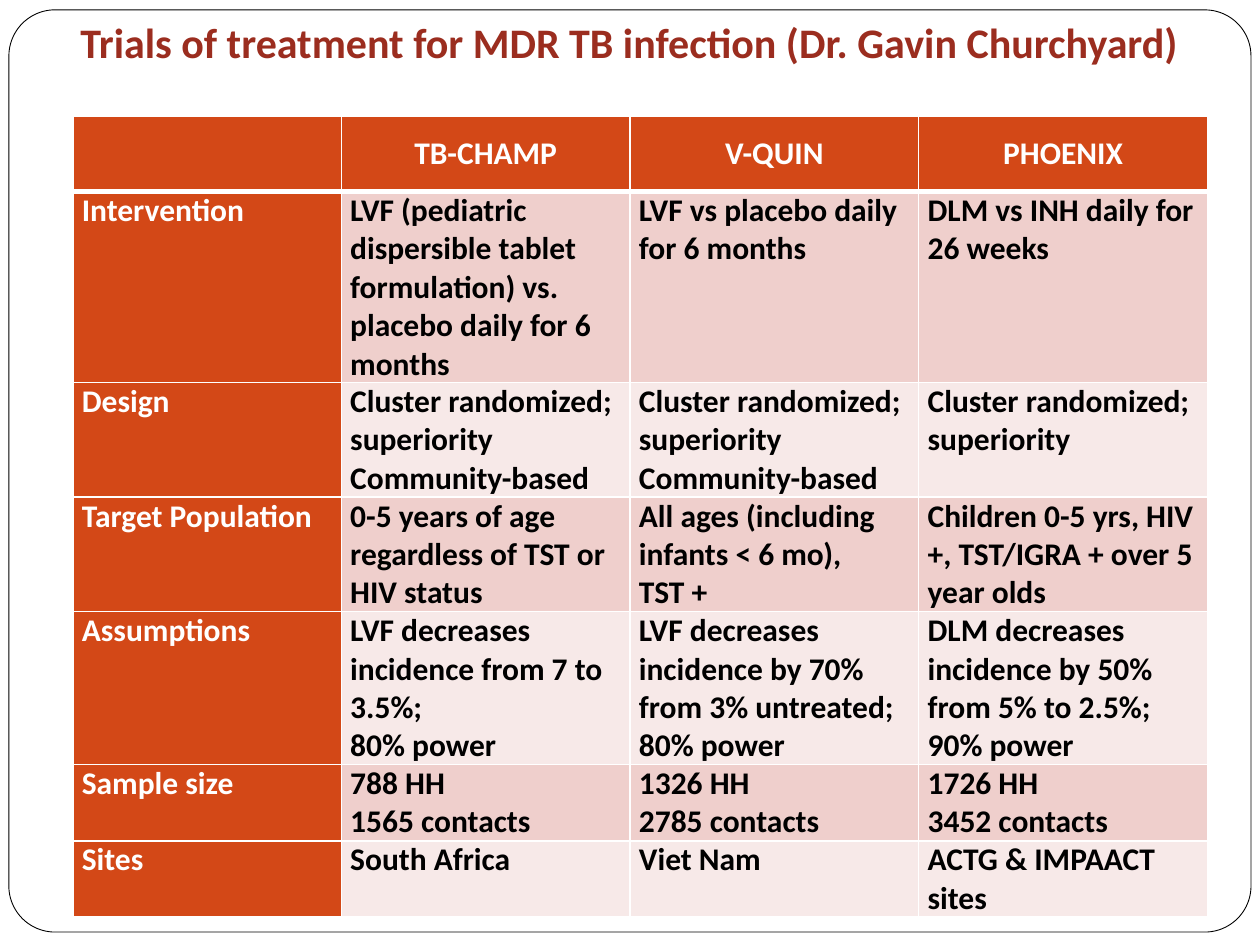
from lxml.etree import SubElement
from pptx import Presentation
from pptx.dml.color import RGBColor
from pptx.enum.shapes import MSO_SHAPE
from pptx.enum.text import MSO_ANCHOR, PP_ALIGN
from pptx.oxml.ns import qn
from pptx.util import Cm, Pt

TITLE = "Trials of treatment for MDR TB infection (Dr. Gavin Churchyard)"
TRIALS = ["", "TB-CHAMP", "V-QUIN", "PHOENIX"]
# Each newline starts a new paragraph; the number is the lines the row needs.
FEATURES = [
    (5, ["Intervention",
         "LVF (pediatric dispersible tablet formulation) vs. placebo daily for 6 months",
         "LVF vs placebo daily for 6 months",
         "DLM vs INH daily for 26 weeks"]),
    (3, ["Design",
         "Cluster randomized; superiority\nCommunity-based",
         "Cluster randomized; superiority\nCommunity-based",
         "Cluster randomized; superiority"]),
    (3, ["Target Population",
         "0-5 years of age regardless of TST or HIV status",
         "All ages (including infants < 6 mo),\nTST +",
         "Children 0-5 yrs, HIV +, TST/IGRA + over 5 year olds"]),
    (4, ["Assumptions",
         "LVF decreases incidence from 7 to 3.5%;\n80% power",
         "LVF decreases incidence by 70% from 3% untreated;\n80% power",
         "DLM decreases incidence by 50% from 5% to 2.5%;\n90% power"]),
    (2, ["Sample size",
         "788 HH\n1565 contacts",
         "1326 HH\n2785 contacts",
         "1726 HH\n3452 contacts"]),
    (2, ["Sites", "South Africa", "Viet Nam", "ACTG & IMPAACT sites"]),
]
COLORS = {"white": "FFFFFF", "black": "000000", "title": "9B2D1F",
          "header": "D34817", "odd": "EFCFCC", "even": "F7E9E8"}
FONT = "Calibri"
LABEL_WIDTH, TRIAL_WIDTH = 5.41, 5.82
HEADER_HEIGHT, LINE_HEIGHT = 1.52, 0.77


def color(name):
    return RGBColor.from_string(COLORS[name])


def style(paragraph, size, color_name, align):
    paragraph.alignment = align
    font = paragraph.font
    font.name, font.size, font.bold = FONT, Pt(size), True
    font.color.rgb = color(color_name)


def add_borders(cell, bottom):
    """Put white borders before the cell's fill, as the schema orders them."""
    properties = cell._tc.get_or_add_tcPr()
    sides = {"a:lnL": 1, "a:lnR": 1, "a:lnT": 1, "a:lnB": bottom}
    for position, (side, width) in enumerate(sides.items()):
        border = SubElement(properties, qn(side), w=str(Pt(width)))
        fill = SubElement(border, qn("a:solidFill"))
        SubElement(fill, qn("a:srgbClr"), val=COLORS["white"])
        properties.insert(position, border)


def fill_cell(cell, text, fill, ink, header):
    cell.fill.solid()
    cell.fill.fore_color.rgb = color(fill)
    cell.margin_left = cell.margin_right = Cm(0.18)
    cell.margin_top = cell.margin_bottom = 0
    cell.vertical_anchor = MSO_ANCHOR.MIDDLE if header else MSO_ANCHOR.TOP
    cell.text = text
    for paragraph in cell.text_frame.paragraphs:
        style(paragraph, 18, ink, PP_ALIGN.CENTER if header else PP_ALIGN.LEFT)
    add_borders(cell, 3 if header else 1)


def add_frame(slide):
    frame = slide.shapes.add_shape(MSO_SHAPE.ROUNDED_RECTANGLE,
                                   Cm(0.18), Cm(0.2), Cm(25.04), Cm(18.59))
    frame.adjustments[0] = 0.05
    frame.shadow.inherit = False
    frame.fill.solid()
    frame.fill.fore_color.rgb = color("white")
    frame.line.color.rgb = color("black")
    frame.line.width = Pt(0.5)


def add_title(slide):
    title = slide.shapes.add_textbox(Cm(0.2), Cm(-0.64), Cm(24.97), Cm(3.18))
    text_frame = title.text_frame
    text_frame.word_wrap = True
    text_frame.vertical_anchor = MSO_ANCHOR.BOTTOM
    text_frame.margin_bottom = Cm(1.2)
    text_frame.text = TITLE
    style(text_frame.paragraphs[0], 24, "title", PP_ALIGN.CENTER)


def add_trials(slide):
    widths = [LABEL_WIDTH] + [TRIAL_WIDTH] * 3
    heights = [HEADER_HEIGHT] + [lines * LINE_HEIGHT for lines, _ in FEATURES]
    rows = [TRIALS] + [texts for _, texts in FEATURES]
    table = slide.shapes.add_table(len(rows), len(widths), Cm(1.47), Cm(2.34),
                                   Cm(sum(widths)), Cm(sum(heights))).table
    for column, width in zip(table.columns, widths):
        column.width = Cm(width)
    for r, (texts, height) in enumerate(zip(rows, heights)):
        table.rows[r].height = Cm(height)
        for c, text in enumerate(texts):
            if r == 0 or c == 0:
                fill, ink = "header", "white"
            else:
                fill, ink = ("odd" if r % 2 else "even"), "black"
            fill_cell(table.cell(r, c), text, fill, ink, header=r == 0)


def main():
    presentation = Presentation()
    presentation.slide_width, presentation.slide_height = Cm(25.4), Cm(19.05)
    slide = presentation.slides.add_slide(presentation.slide_layouts[6])
    add_frame(slide)
    add_title(slide)
    add_trials(slide)
    presentation.save("out.pptx")


if __name__ == "__main__":
    main()
